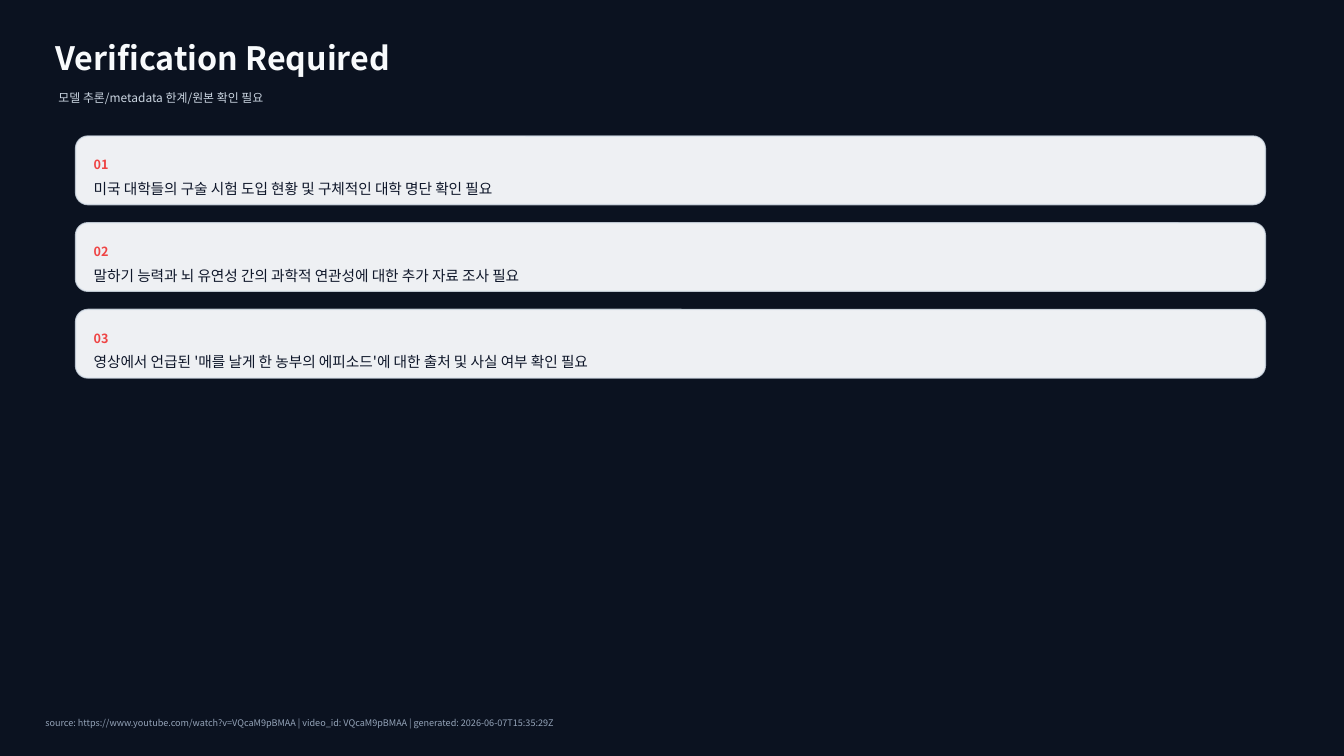
from dataclasses import dataclass

from lxml import etree
from pptx import Presentation
from pptx import util as u
from pptx.dml.color import RGBColor
from pptx.enum import shapes, text
from pptx.oxml.ns import qn


@dataclass(frozen=True)
class Theme:
    font: str = "Noto Sans CJK KR"
    background: str = "0B1220"
    heading: str = "F8FAFC"
    muted: str = "CBD5E1"
    card: str = "F8FAFC"
    border: str = "D7E0EA"
    accent: str = "EF4444"
    ink: str = "0F172A"
    faint: str = "94A3B8"
    title_size: float = 23
    subtitle_size: float = 8.5
    number_size: float = 9
    item_size: float = 10.5
    source_size: float = 6.5


CELL = 0.1  # inches per grid column and row
CARD_LEFT, CARD_TOP, CARD_WIDTH, CARD_HEIGHT = 7.5, 13.5, 118, 6.8
CARD_GAP = 1.8
CARD_PADDING = 1.8

CHECKS = [
    "미국 대학들의 구술 시험 도입 현황 및 구체적인 대학 명단 확인 필요",
    "말하기 능력과 뇌 유연성 간의 과학적 연관성에 대한 추가 자료 조사 필요",
    "영상에서 언급된 '매를 날게 한 농부의 에피소드'에 대한 출처 및 사실 여부 확인 필요",
]


def grid(*cells):
    return [u.Inches(cell * CELL) for cell in cells]


def set_opacity(fill, percent):
    """Make a solid fill partly transparent."""
    color = fill._xPr.find(qn("a:solidFill"))[0]
    etree.SubElement(color, qn("a:alpha")).set("val", str(percent * 1000))


class SlideBuilder:
    def __init__(self, deck, theme):
        self.theme = theme
        self.page = deck.slides.add_slide(deck.slide_layouts.get_by_name("Title Only"))
        fill = self.page.background.fill
        fill.solid()
        fill.fore_color.rgb = RGBColor.from_string(theme.background)

    def set_line(self, box, words, size, color, bold=False):
        """Fill a box with one left-aligned, vertically centred line."""
        frame = box.text_frame
        frame.word_wrap = True
        frame.auto_size = text.MSO_AUTO_SIZE.NONE
        frame.vertical_anchor = text.MSO_ANCHOR.MIDDLE
        frame.margin_left = frame.margin_right = 0
        frame.margin_top = frame.margin_bottom = 0
        para = frame.paragraphs[0]
        para.text = words
        para.alignment = text.PP_ALIGN.LEFT
        font = para.font
        font.name = self.theme.font
        font.size = u.Pt(size)
        font.bold = bold
        font.color.rgb = RGBColor.from_string(color)
        etree.SubElement(font._rPr, qn("a:ea")).set("typeface", self.theme.font)

    def title(self, words, *cells):
        box = self.page.shapes.title
        box.left, box.top, box.width, box.height = grid(*cells)
        self.set_line(box, words, self.theme.title_size, self.theme.heading, bold=True)

    def label(self, words, cells, size, color, bold=False):
        box = self.page.shapes.add_textbox(*grid(*cells))
        self.set_line(box, words, size, color, bold)

    def panel(self, *cells):
        box = self.page.shapes.add_shape(
            shapes.MSO_SHAPE.ROUNDED_RECTANGLE, *grid(*cells))
        box.shadow.inherit = False
        box.adjustments[0] = 0.18
        box.fill.solid()
        box.fill.fore_color.rgb = RGBColor.from_string(self.theme.card)
        set_opacity(box.fill, 96)
        box.line.width = u.Pt(1)
        box.line.color.rgb = RGBColor.from_string(self.theme.border)
        set_opacity(box.line.fill, 80)

    def check_card(self, index, words):
        theme = self.theme
        top = CARD_TOP + index * (CARD_HEIGHT + CARD_GAP)
        left = CARD_LEFT + CARD_PADDING
        width = CARD_WIDTH - 2 * CARD_PADDING
        self.panel(CARD_LEFT, top, CARD_WIDTH, CARD_HEIGHT)
        self.label(f"{index + 1:02}", (left, top + 1.6, width, 2.5),
                   theme.number_size, theme.accent, bold=True)
        self.label(words, (left, top + 5, width, 0.4), theme.item_size, theme.ink)


def main():
    deck = Presentation()
    deck.slide_width, deck.slide_height = u.Inches(13.33), u.Inches(7.5)
    theme = Theme()
    slide = SlideBuilder(deck, theme)
    slide.title("Verification Required", 5.5, 3.5, 120, 4.5)
    slide.label("모델 추론/metadata 한계/원본 확인 필요", (5.8, 8.3, 115, 2.8),
                theme.subtitle_size, theme.muted)
    for index, words in enumerate(CHECKS):
        slide.check_card(index, words)
    slide.label("source: https://www.youtube.com/watch?v=VQcaM9pBMAA | "
                "video_id: VQcaM9pBMAA | generated: 2026-06-07T15:35:29Z",
                (4.5, 70.5, 124, 2.5), theme.source_size, theme.faint)
    deck.save("out.pptx")


if __name__ == "__main__":
    main()
